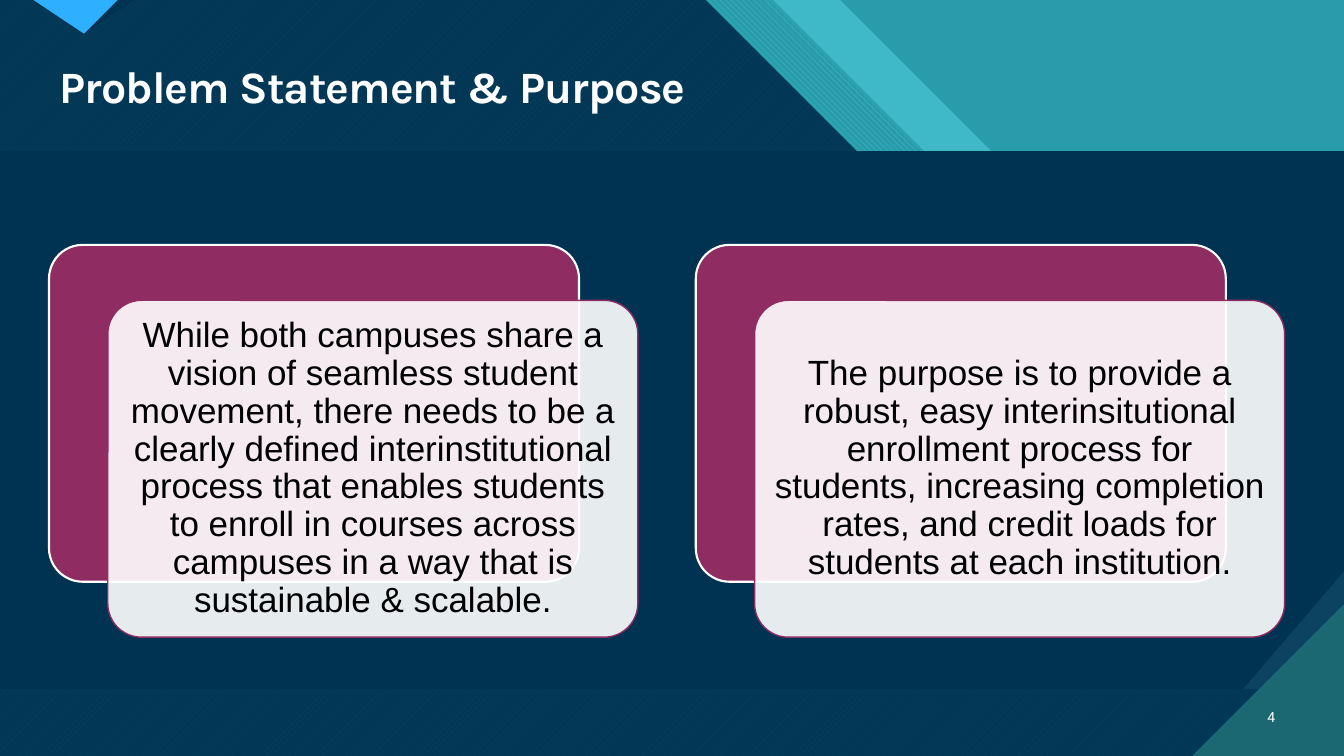
from dataclasses import dataclass

from lxml import etree
from pptx import Presentation, util as u
from pptx.dml.color import RGBColor
from pptx.enum import dml, shapes, text
from pptx.oxml.ns import qn

COLUMNS, ROWS = 80, 45
CELL = u.Inches(7.5) // ROWS


@dataclass(frozen=True)
class Theme:
    navy: str = "003352"
    slate: str = "0C4360"
    teal: str = "299CAB"
    aqua: str = "47C3D3"
    pine: str = "1B6872"
    blue: str = "2FAFFF"
    plum: str = "8F2D63"
    white: str = "FFFFFF"
    black: str = "000000"
    title_font: str = "Karla"
    body_font: str = "Arial"
    number_font: str = "Roboto"
    title_size: int = 32
    body_size: int = 25
    number_size: int = 10


class SlideBuilder:
    def __init__(self, page, theme):
        self.page = page
        self.theme = theme

    def cells(self, *values):
        return [round(value * CELL) for value in values]

    def paint(self, shape, color, alpha=None, line=None, width=0):
        shape.shadow.inherit = False
        shape.fill.solid()
        shape.fill.fore_color.rgb = RGBColor.from_string(color)
        if alpha is not None:
            fill = shape._element.spPr.find(qn("a:solidFill"))
            etree.SubElement(fill[0], qn("a:alpha"), val=str(alpha * 1000))
        if line:
            shape.line.color.rgb = RGBColor.from_string(line)
            shape.line.width = u.Pt(width)
        else:
            shape.line.fill.background()

    def polygon(self, points, color, alpha=None, pattern=None, back=None):
        start, *rest = points
        builder = self.page.shapes.build_freeform(*start, scale=CELL)
        builder.add_line_segments(rest)
        shape = builder.convert_to_shape()
        self.paint(shape, color, alpha)
        if pattern:
            shape.fill.patterned()
            shape.fill.pattern = pattern
            shape.fill.fore_color.rgb = RGBColor.from_string(color)
            shape.fill.back_color.rgb = RGBColor.from_string(back)

    def backdrop(self, edge, color, **style):
        bend = 18
        points = [(0, 0), (edge, 0), (edge + bend, bend), (COLUMNS, bend),
                  (COLUMNS, ROWS), (0, ROWS)]
        self.polygon(points, color, **style)

    def panel(self, top, bottom, snip, color, **style):
        points = [(0, top), (COLUMNS, top), (COLUMNS, bottom - snip),
                  (COLUMNS - snip, bottom), (0, bottom)]
        self.polygon(points, color, **style)

    def pointer(self, left, depth, color, **style):
        points = [(left, 0), (left + 2 * depth, 0), (left + depth, depth)]
        self.polygon(points, color, **style)

    def set_text(self, shape, words, font, size, color, align, bold=False, spacing=None):
        frame = shape.text_frame
        frame.word_wrap = True
        frame.auto_size = text.MSO_AUTO_SIZE.NONE
        frame.vertical_anchor = text.MSO_ANCHOR.MIDDLE
        para = frame.paragraphs[0]
        para.text = words
        para.alignment = align
        para.line_spacing = spacing
        para.font.name = font
        para.font.size = u.Pt(size)
        para.font.bold = bold
        para.font.color.rgb = RGBColor.from_string(color)
        return para

    def title(self, words, left, top, width, height):
        box = self.page.shapes.title
        box.left, box.top, box.width, box.height = self.cells(left, top, width, height)
        para = self.set_text(box, words, self.theme.title_font, self.theme.title_size,
                             self.theme.white, text.PP_ALIGN.LEFT, True, 0.9)
        para._p.pPr.find(qn("a:defRPr")).set("spc", "-70")
        self.page.shapes._spTree.append(box._element)

    def number(self, words, left, top, width, height):
        box = self.page.shapes.add_textbox(*self.cells(left, top, width, height))
        self.set_text(box, words, self.theme.number_font, self.theme.number_size,
                      self.theme.white, text.PP_ALIGN.RIGHT)

    def rounded(self, left, top, width, height, color, line, line_width, alpha=None):
        shape = self.page.shapes.add_shape(
            shapes.MSO_SHAPE.ROUNDED_RECTANGLE, *self.cells(left, top, width, height))
        shape.adjustments[0] = 0.1
        self.paint(shape, color, alpha, line, line_width)
        return shape

    def card(self, words, left, top, width, height):
        theme = self.theme
        self.rounded(left, top, width, height, theme.plum, theme.white, 1.5)
        front = self.rounded(left + 3.5, top + 3.3, width, height,
                             theme.white, theme.plum, 1, alpha=90)
        frame = front.text_frame
        frame.margin_left = frame.margin_right = u.Inches(0.1)
        frame.margin_top = frame.margin_bottom = u.Inches(0.1)
        self.set_text(front, words, theme.body_font, theme.body_size, theme.black,
                      text.PP_ALIGN.CENTER, spacing=0.9)


def main():
    theme = Theme()
    patterns = dml.MSO_PATTERN
    deck = Presentation()
    deck.slide_width, deck.slide_height = COLUMNS * CELL, ROWS * CELL
    page = deck.slides.add_slide(deck.slide_layouts[5])
    page.background.fill.solid()
    page.background.fill.fore_color.rgb = RGBColor.from_string(theme.teal)
    slide = SlideBuilder(page, theme)

    slide.backdrop(49.5, theme.aqua, alpha=74)
    slide.backdrop(45.6, theme.aqua, back=theme.teal,
                   pattern=patterns.WIDE_DOWNWARD_DIAGONAL)
    slide.backdrop(41.7, theme.aqua, back=theme.pine,
                   pattern=patterns.WIDE_UPWARD_DIAGONAL)
    slide.backdrop(41.7, theme.navy, alpha=90)
    slide.pointer(2.9, 2.45, theme.navy)
    slide.pointer(2.2, 2.4, theme.blue, back=theme.pine,
                  pattern=patterns.DARK_HORIZONTAL)
    slide.panel(8.9, 40.7, 0, theme.slate, back=theme.pine,
                pattern=patterns.DARK_VERTICAL)
    slide.panel(8.9, 40.7, 6.25, theme.navy)
    corner = 9.25
    slide.polygon([(COLUMNS - corner, ROWS), (COLUMNS, ROWS), (COLUMNS, ROWS - corner)],
                  theme.pine, back=theme.aqua, pattern=patterns.DARK_HORIZONTAL)

    slide.title("Problem Statement & Purpose", 2.94, 3.55, 73.55, 3.55)
    slide.number("4", 73.86, 41.45, 2.64, 2.4)
    statements = [
        "While both campuses share a vision of seamless student movement, there needs "
        "to be a clearly defined interinstitutional process that enables students to "
        "enroll in courses across campuses in a way that is sustainable & scalable.",
        "The purpose is to provide a robust, easy interinsitutional enrollment process "
        "for students, increasing completion rates, and credit loads for students at "
        "each institution.",
    ]
    for index, statement in enumerate(statements):
        slide.card(statement, 2.92 + index * 38.5, 14.58, 31.55, 20.05)

    deck.save("out.pptx")


if __name__ == "__main__":
    main()
